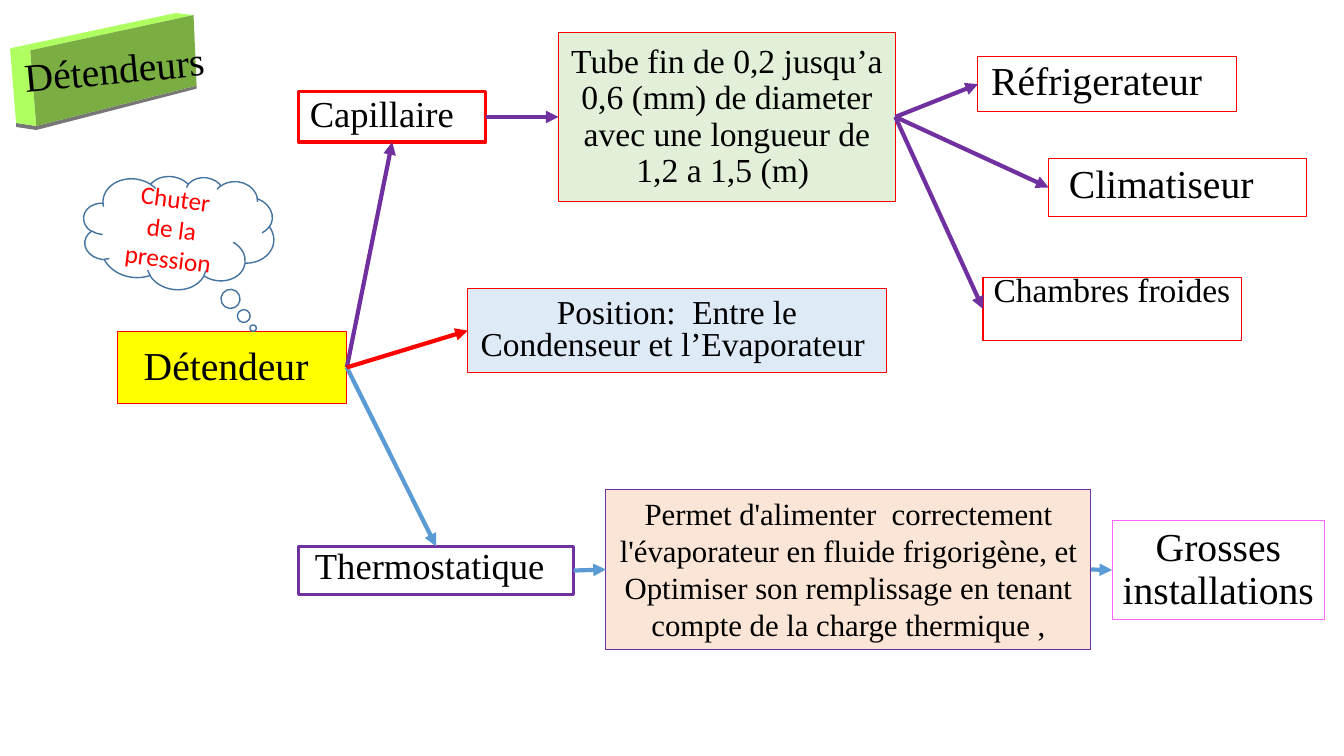
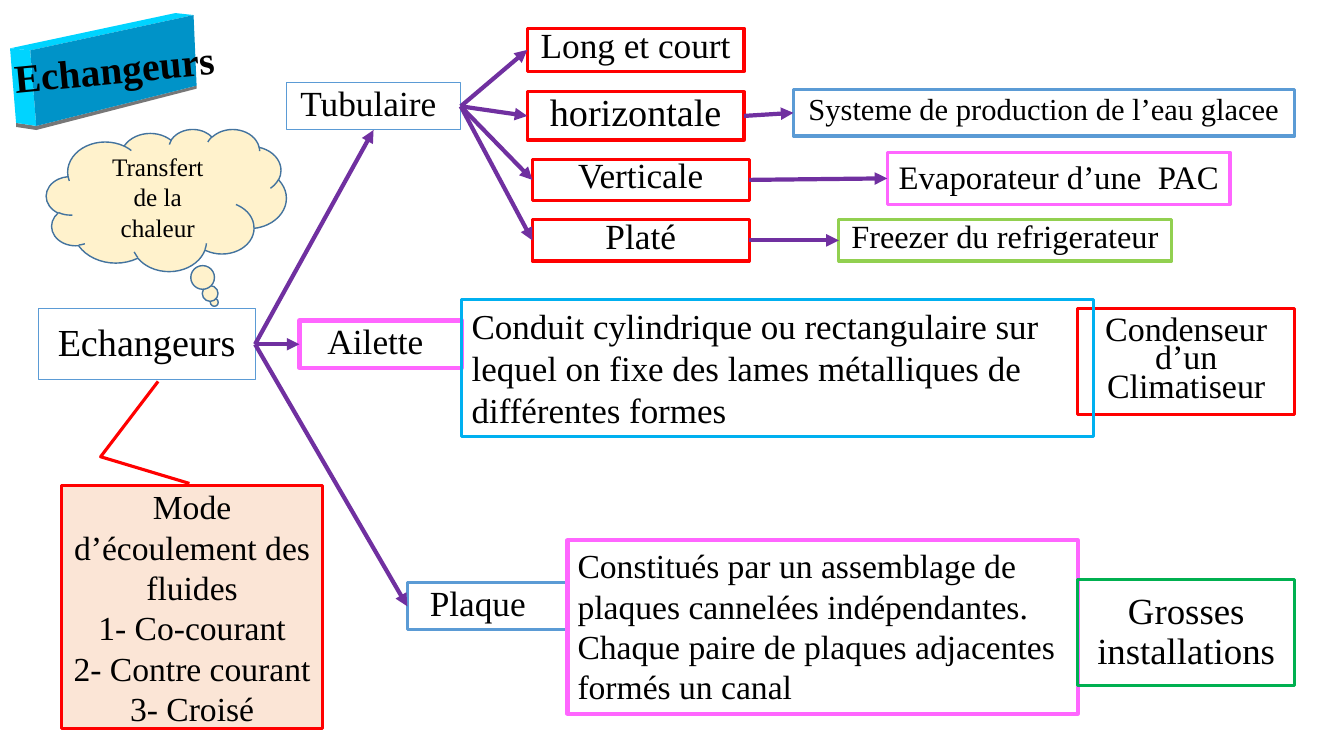
from lxml.etree import SubElement
from pptx import Presentation
from pptx.dml.color import RGBColor
from pptx.enum.shapes import MSO_CONNECTOR, MSO_SHAPE
from pptx.enum.text import MSO_ANCHOR, PP_ALIGN
from pptx.oxml.ns import qn
from pptx.util import Inches, Pt

COLORS = {
    "black": "000000", "red": "FF0000", "purple": "7030A0", "blue": "5B9BD5",
    "pink": "FF66FF", "lime": "92D050", "green": "00B050", "cyan": "00B0F0",
    "yellow": "FFFF00", "pale green": "E2F0D9", "pale orange": "FBE5D6",
    "pale blue": "DEEBF7", "cream": "FFF2CC", "cloud line": "43739E",
    "lime front": "7AAE43", "lime edge": "AFFF60",
    "cyan front": "0093C8", "cyan edge": "00D4FF", "shade": "777777",
}
SERIF = "Times New Roman"
TOP, LEFT, BOTTOM, RIGHT = range(4)
BANNER_FACES = [
    ("shade", [(16, 122), (36, 125), (195, 85), (195, 88), (36, 129), (16, 126)]),
    ("edge", [(10, 48), (174, 13), (192, 15), (30, 50)]),
    ("edge", [(10, 48), (30, 50), (36, 125), (16, 122)]),
    ("front", [(30, 50), (192, 15), (195, 85), (36, 125)]),
]


def color(name):
    return RGBColor.from_string(COLORS[name])


def paint(shape, fill=None, line=None, width=0.75):
    shape.shadow.inherit = False
    if fill:
        shape.fill.solid()
        shape.fill.fore_color.rgb = color(fill)
    else:
        shape.fill.background()
    if line:
        shape.line.color.rgb = color(line)
        shape.line.width = Pt(width)
    else:
        shape.line.fill.background()


def write(shape, text, size, spacing=1.0, align=PP_ALIGN.CENTER,
          font=SERIF, ink="black", bold=False):
    frame = shape.text_frame
    frame.word_wrap = True
    for index, words in enumerate(text.split("\n")):
        para = frame.add_paragraph() if index else frame.paragraphs[0]
        para.alignment = align
        para.line_spacing = spacing
        span = para.add_run()
        span.text = words
        span.font.name = font
        span.font.size = Pt(size)
        span.font.bold = bold
        span.font.color.rgb = color(ink)


def label(page, area, text, size, line, width=2.25, fill=None, spacing=0.8,
          align=PP_ALIGN.CENTER, anchor=MSO_ANCHOR.MIDDLE, shift=0,
          kind=MSO_SHAPE.RECTANGLE):
    box = page.shapes.add_shape(kind, *map(Inches, area))
    paint(box, fill, line, width)
    write(box, text, size, spacing, align)
    box.text_frame.vertical_anchor = anchor
    box.text_frame.margin_right = Inches(0.1 + 2 * shift)
    return box


def arrow(page, start, end, ink="purple", end_side=LEFT):
    link = page.shapes.add_connector(MSO_CONNECTOR.STRAIGHT, 0, 0, 0, 0)
    link.begin_connect(start, RIGHT)
    link.end_connect(end, end_side)
    link.line.color.rgb = color(ink)
    link.line.width = Pt(3)
    SubElement(link.line._get_or_add_ln(), qn("a:tailEnd"), type="triangle")
    SubElement(link.element.spPr, qn("a:effectLst"))


def cloud(page, area, text, tail, fill=None, font=SERIF, ink="black", turn=0):
    bubble = page.shapes.add_shape(MSO_SHAPE.CLOUD_CALLOUT, *map(Inches, area))
    bubble.adjustments[0], bubble.adjustments[1] = tail
    bubble.rotation = turn
    paint(bubble, fill, "cloud line", 1)
    write(bubble, text, 18, font=font, ink=ink)


def banner(page, left, top, text, tone, bold=False):
    for face, points in BANNER_FACES:
        outline = page.shapes.build_freeform(*points[0], scale=Inches(0.01))
        outline.add_line_segments(points[1:], close=True)
        panel = outline.convert_to_shape(Inches(left), Inches(top))
        paint(panel, face if face == "shade" else f"{tone} {face}")
    title = page.shapes.title
    title.left, title.top = Inches(left), Inches(top + 0.35)
    title.width, title.height = Inches(2.27), Inches(0.71)
    title.rotation = -5.5
    frame = title.text_frame
    frame.margin_left = frame.margin_right = 0
    frame.vertical_anchor = MSO_ANCHOR.MIDDLE
    write(title, text, 28.3, 0.9, bold=bold)
    title.element.getparent().append(title.element)


def capillary_branch(page, left, top, root):
    capillary = label(page, (left, top + 0.59, 1.86, 0.5), "Capillaire", 26.1,
                      "red", shift=0.1)
    tube = label(page, (left + 2.58, top, 3.34, 1.68),
                 "Tube fin de 0,2 jusqu’a 0,6 (mm) de diameter avec une "
                 "longueur de 1,2 a 1,5 (m) ", 24, "red", 0.75, "pale green", 0.9)
    arrow(page, root, capillary, end_side=BOTTOM)
    arrow(page, capillary, tube)
    for x, y, height, text, size, shift in [
        (6.74, 0.24, 0.55, "Réfrigerateur", 28.3, 0.1),
        (7.44, 1.25, 0.58, "Climatiseur", 28.3, 0.16),
        (6.79, 2.43, 0.63, "Chambres froides", 23.9, 0),
    ]:
        use = label(page, (left + x, top + y, 2.56, height), text, size, "red",
                    0.75, shift=shift)
        arrow(page, tube, use)
    use.text_frame.vertical_anchor = MSO_ANCHOR.TOP
    use.text_frame.margin_top = 0


def thermostatic_branch(page, left, top, root):
    valve = label(page, (left, top + 0.56, 2.73, 0.48), "Thermostatique", 26.1,
                  "purple", spacing=0.7, shift=0.06)
    role = label(page, (left + 3.05, top, 4.81, 1.58),
                 "Permet d'alimenter  correctement l'évaporateur en fluide "
                 "frigorigène, et Optimiser son remplissage en tenant compte "
                 "de la charge thermique ,", 22, "purple", 0.75, "pale orange",
                 1.0, anchor=MSO_ANCHOR.TOP)
    use = label(page, (left + 8.07, top + 0.3, 2.11, 0.99),
                "Grosses\ninstallations", 28.3, "pink", 0.75, spacing=0.9)
    arrow(page, root, valve, "blue", TOP)
    arrow(page, valve, role, "blue")
    arrow(page, role, use, "blue")


def tubular_branch(page, left, top, root):
    tubular = label(page, (left, top + 0.54, 1.73, 0.47), "Tubulaire", 25.2,
                    "blue", 0.75, shift=0.05)
    arrow(page, root, tubular, end_side=BOTTOM)
    forms = []
    for x, y, height, text, size, spacing in [
        (2.39, 0, 0.43, "Long et court", 25.2, 0.7),
        (2.39, 0.63, 0.48, "horizontale", 27.3, 0.8),
        (2.44, 1.3, 0.41, "Verticale", 25.2, 0.7),
        (2.44, 1.9, 0.41, "Platé", 25.2, 0.7),
    ]:
        form = label(page, (left + x, top + y, 2.15, height), text, size, "red",
                     spacing=spacing)
        arrow(page, tubular, form)
        forms.append(form)
    uses = [
        (5.03, 0.61, 4.97, 0.46, "Systeme de production de l’eau glacee", 21.8,
         "blue", 0.7),
        (5.96, 1.23, 3.4, 0.52, "Evaporateur d’une  PAC", 23.4, "pink", 0.9),
        (5.48, 1.9, 3.3, 0.41, "Freezer du refrigerateur", 23.1, "lime", 0.7),
    ]
    for form, (x, y, width, height, text, size, line, spacing) in zip(forms[1:], uses):
        use = label(page, (left + x, top + y, width, height), text, size, line,
                    spacing=spacing)
        arrow(page, form, use)


def described_branch(page, left, top, root, name, description, use):
    for (x, y, width, height), text, size, options in [name, description, use]:
        box = label(page, (left + x, top + y, width, height), text, size, **options)
        if text == name[1]:
            arrow(page, root, box)


def flow_modes(page, left, top):
    box = label(page, (left, top, 2.59, 2.41),
                "Mode d’écoulement des fluides\n1- Co-courant\n"
                "2- Contre courant\n3- Croisé", 24, "red", fill="pale orange",
                spacing=1.0, kind=MSO_SHAPE.LINE_CALLOUT_2)
    for index, value in enumerate([-0.01, 0.49, -0.12, 0.15, -0.43, 0.37]):
        box.adjustments[index] = value


def expansion_slide(page):
    banner(page, 0, 0, "Détendeurs", "lime")
    root = label(page, (1.17, 3.29, 2.27, 0.71), "Détendeur", 28.3, "red", 0.75,
                 "yellow", 0.9, shift=0.06)
    capillary_branch(page, 2.96, 0.32, root)
    thermostatic_branch(page, 2.96, 4.86, root)
    position = label(page, (4.64, 2.86, 4.15, 0.84),
                     "Position:  Entre le Condenseur et l’Evaporateur ", 23.9,
                     "red", 0.75, "pale blue")
    arrow(page, root, position, "red")
    cloud(page, (0.82, 1.73, 1.9, 1.14), "Chuter\nde la pression", (0.45, 0.75),
          font="Calibri", ink="red", turn=7.2)


def exchanger_slide(page):
    banner(page, 0, 0, "Echangeurs", "cyan", bold=True)
    root = label(page, (0.38, 3.06, 2.15, 0.71), "Echangeurs", 27.3, "blue", 0.75,
                 spacing=0.9)
    tubular_branch(page, 2.84, 0.28, root)
    prose = {"spacing": 1.0, "align": PP_ALIGN.LEFT, "anchor": MSO_ANCHOR.TOP}
    described_branch(
        page, 2.97, 2.97, root,
        ((0, 0.21, 1.61, 0.47), "Ailette", 25.2,
         {"line": "pink", "width": 3, "shift": 0.05}),
        ((7.72, 0.09, 2.15, 1.05), "Condenseur d’un\nClimatiseur", 24.3,
         {"line": "red", "spacing": 0.7}),
        ((1.61, 0, 6.27, 1.36),
         "Conduit cylindrique ou rectangulaire sur lequel on fixe des lames "
         "métalliques de différentes formes", 25, {"line": "cyan", **prose}))
    described_branch(
        page, 4.04, 5.36, root,
        ((0, 0.42, 1.6, 0.47), "Plaque", 25.2, {"line": "blue", "shift": 0.1}),
        ((1.59, 0, 5.06, 1.72),
         "Constitués par un assemblage de plaques cannelées indépendantes. "
         "Chaque paire de plaques adjacentes formés un canal", 24,
         {"line": "pink", "width": 3, **prose}),
        ((6.65, 0.39, 2.15, 1.05), "Grosses installations", 26.3,
         {"line": "green", "spacing": 0.9}))
    cloud(page, (0.46, 1.28, 2.38, 1.41), "Transfert\nde la\nchaleur", (0.2, 0.72),
          fill="cream")
    flow_modes(page, 0.61, 4.82)


def main():
    deck = Presentation()
    deck.slide_width, deck.slide_height = Inches(13.33), Inches(7.5)
    for build in (expansion_slide, exchanger_slide):
        build(deck.slides.add_slide(deck.slide_layouts[5]))
    deck.save("out.pptx")


if __name__ == "__main__":
    main()
